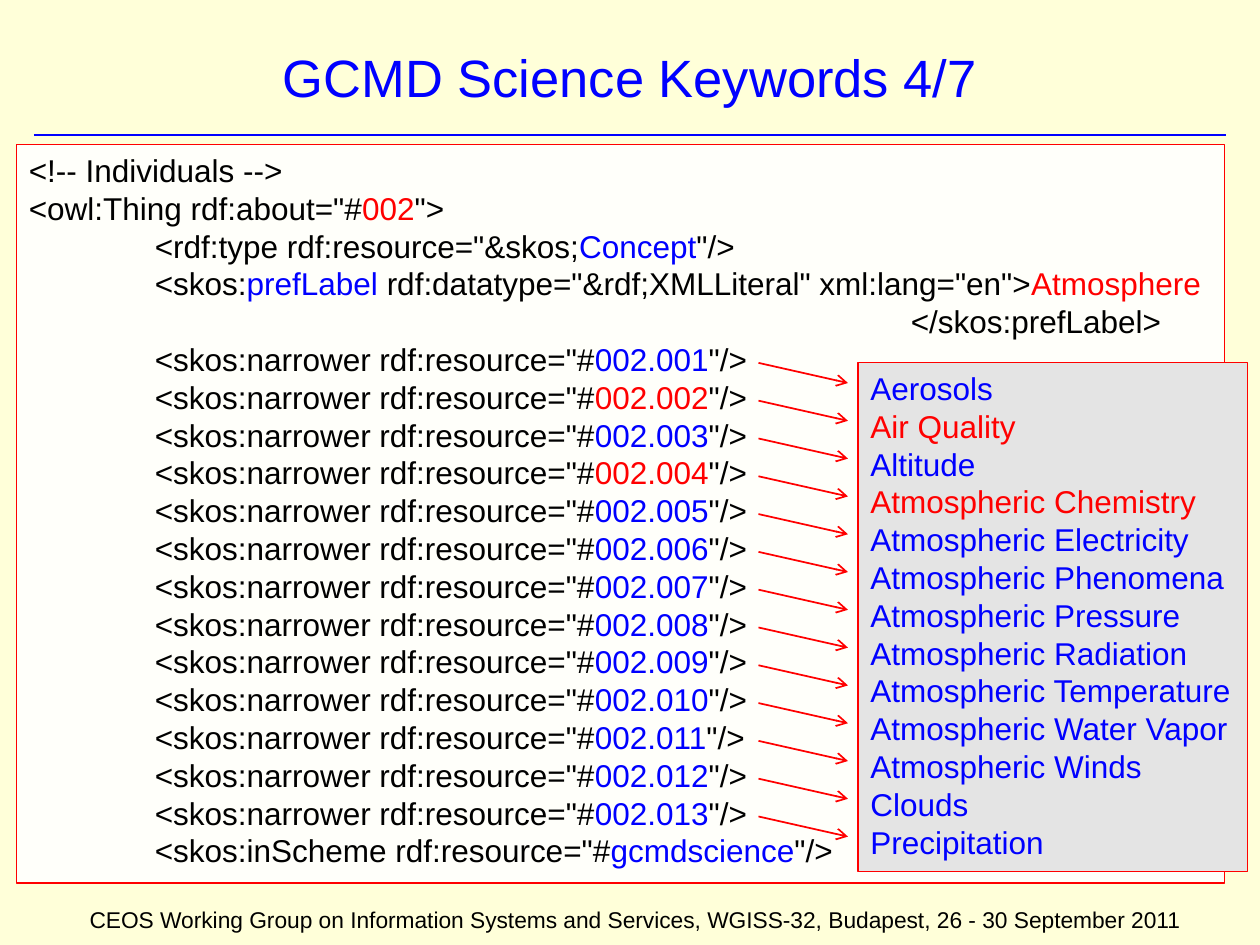
import pptx
import pptx.dml.color
import pptx.enum.shapes
import pptx.enum.text
import pptx.oxml.ns
import pptx.util
from lxml import etree
from dataclasses import dataclass

Inches = pptx.util.Inches
Pt = pptx.util.Pt
Align = pptx.enum.text.PP_ALIGN
Anchor = pptx.enum.text.MSO_ANCHOR
qn = pptx.oxml.ns.qn


@dataclass(frozen=True)
class Theme:
    font: str = "Arial"
    background: str = "FFFFD9"
    code_fill: str = "FFFFFA"
    list_fill: str = "E4E4E4"
    black: str = "000000"
    blue: str = "0000FF"
    red: str = "FF0000"
    title_size: float = 30
    body_size: float = 18
    footer_size: float = 13


def rgb(value):
    return pptx.dml.color.RGBColor.from_string(value)


def add_inch_tabs(para, count):
    """Give the paragraph left tab stops one inch apart."""
    tabs = etree.SubElement(para._p.get_or_add_pPr(), qn("a:tabLst"))
    for stop in range(1, count + 1):
        etree.SubElement(tabs, qn("a:tab"), pos=str(Inches(stop)), algn="l")


class SlideBuilder:
    def __init__(self, deck, theme):
        self.theme = theme
        self.slide = deck.slides.add_slide(deck.slide_layouts[5])
        fill = self.slide.background.fill
        fill.solid()
        fill.fore_color.rgb = rgb(theme.background)

    def style(self, span, size, color):
        span.font.name = self.theme.font
        span.font.size = Pt(size)
        span.font.color.rgb = rgb(color)

    def title(self, text, left, top, width, height):
        box = self.slide.shapes.title
        box.left, box.top = Inches(left), Inches(top)
        box.width, box.height = Inches(width), Inches(height)
        box.text_frame.text = text
        box.text_frame.vertical_anchor = Anchor.MIDDLE
        para = box.text_frame.paragraphs[0]
        para.alignment = Align.CENTER
        self.style(para.runs[0], self.theme.title_size, self.theme.blue)

    def footer(self, text, left, top, width, height):
        box = self.slide.shapes.add_textbox(
            Inches(left), Inches(top), Inches(width), Inches(height))
        box.text_frame.word_wrap = True
        box.text_frame.text = text
        para = box.text_frame.paragraphs[0]
        para.alignment = Align.CENTER
        self.style(para.runs[0], self.theme.footer_size, self.theme.black)

    def panel(self, lines, fill, left, top, width, height):
        """Framed box; each line is a list of (text, color) pairs."""
        box = self.slide.shapes.add_shape(
            pptx.enum.shapes.MSO_SHAPE.RECTANGLE,
            Inches(left), Inches(top), Inches(width), Inches(height))
        box.shadow.inherit = False
        box.fill.solid()
        box.fill.fore_color.rgb = rgb(fill)
        box.line.color.rgb = rgb(self.theme.red)
        box.line.width = Pt(0.75)
        frame = box.text_frame
        frame.word_wrap = False
        frame.auto_size = pptx.enum.text.MSO_AUTO_SIZE.SHAPE_TO_FIT_TEXT
        frame.vertical_anchor = Anchor.TOP
        for index, line in enumerate(lines):
            para = frame.add_paragraph() if index else frame.paragraphs[0]
            para.alignment = Align.LEFT
            tab_count = line[0][0].count("\t")
            if tab_count:
                add_inch_tabs(para, tab_count)
            for text, color in line:
                span = para.add_run()
                span.text = text
                self.style(span, self.theme.body_size, color)

    def line(self, start, end, color, arrow=False):
        connector = self.slide.shapes.add_connector(
            pptx.enum.shapes.MSO_CONNECTOR.STRAIGHT,
            *(Inches(value) for value in (*start, *end)))
        connector.line.color.rgb = rgb(color)
        connector.line.width = Pt(1)
        if arrow:
            etree.SubElement(connector.line._get_or_add_ln(),
                             qn("a:tailEnd"), type="arrow")
        etree.SubElement(connector._element.spPr, qn("a:effectLst"))


def main():
    theme = Theme()
    black, blue, red = theme.black, theme.blue, theme.red
    deck = pptx.Presentation()
    deck.slide_width, deck.slide_height = Inches(10), Inches(7.5)
    page = SlideBuilder(deck, theme)

    # Heading and rule
    page.line((0.27, 1.07), (9.73, 1.07), blue)
    page.title("GCMD Science Keywords 4/7", 0.5, 0.22, 9, 0.77)

    # Keywords narrower than Atmosphere
    keywords = [
        "Aerosols", "Air Quality", "Altitude", "Atmospheric Chemistry",
        "Atmospheric Electricity", "Atmospheric Phenomena",
        "Atmospheric Pressure", "Atmospheric Radiation",
        "Atmospheric Temperature", "Atmospheric Water Vapor",
        "Atmospheric Winds", "Clouds", "Precipitation",
    ]
    highlighted = {"Air Quality", "Atmospheric Chemistry"}
    colors = [red if word in highlighted else blue for word in keywords]

    # Code listing
    narrower = [
        [('\t<skos:narrower rdf:resource="#', black),
         (f"002.{number:03d}", color), ('"/>', black)]
        for number, color in enumerate(colors, start=1)
    ]
    code = [
        [("<!-- Individuals -->", black)],
        [('<owl:Thing rdf:about="#', black), ("002", red), ('">', black)],
        [('\t<rdf:type rdf:resource="&skos;', black), ("Concept", blue),
         ('"/>', black)],
        [("\t<skos:", black), ("prefLabel ", blue),
         ('rdf:datatype="&rdf;XMLLiteral" xml:lang="en">', black),
         ("Atmosphere", red)],
        [("\t\t\t\t\t\t\t</skos:prefLabel>", black)],
        *narrower,
        [('\t<skos:inScheme rdf:resource="#', black), ("gcmdscience", blue),
         ('"/>', black)],
    ]
    page.panel(code, theme.code_fill, 0.13, 1.15, 9.59, 5.86)

    # Keyword list
    page.panel([[pair] for pair in zip(keywords, colors)],
               theme.list_fill, 6.81, 2.88, 3.09, 4.04)

    # One arrow from each code line to its keyword
    for index in range(len(keywords)):
        top = 2.88 + 0.3 * index
        page.line((6.02, top), (6.73, top + 0.16), red, arrow=True)

    # Footer
    page.footer("CEOS Working Group on Information Systems and Services, "
                "WGISS-32, Budapest, 26 - 30 September 2011",
                0.35, 7.14, 9.37, 0.36)

    deck.save("out.pptx")


if __name__ == "__main__":
    main()
